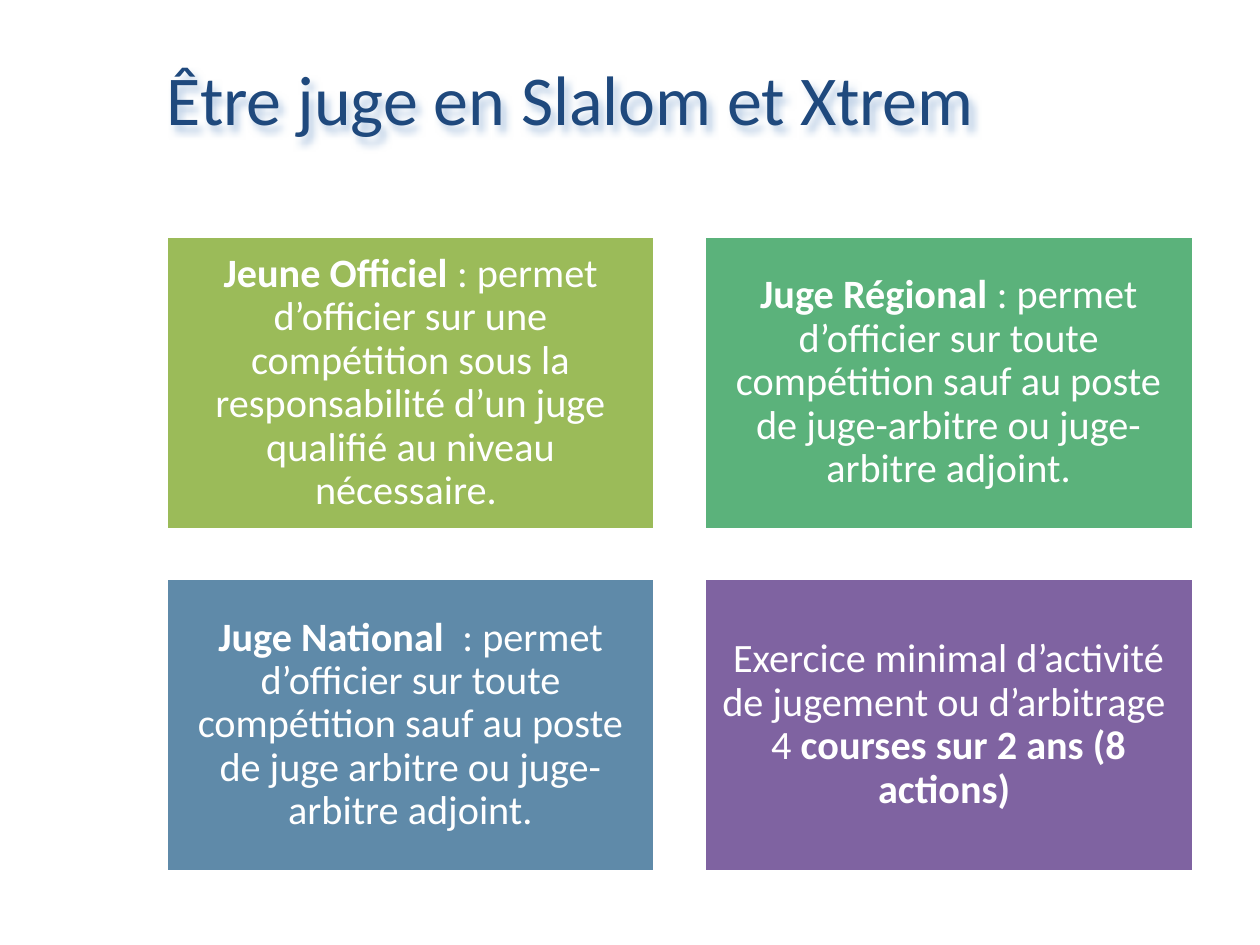
from lxml.etree import SubElement
from pptx import Presentation
from pptx.dml.color import RGBColor
from pptx.enum.shapes import MSO_SHAPE as Shape
from pptx.enum.text import MSO_ANCHOR as Anchor, PP_ALIGN as Align
from pptx.oxml.ns import qn
from pptx.util import Pt

TITLE = "Être juge en Slalom et Xtrem"
CARDS = [
    ("9BBB59", [
        ("Jeune Officiel ", True),
        (": permet d’officier sur une compétition sous la responsabilité "
         "d’un juge qualifié au niveau nécessaire. ", False),
    ]),
    ("5BB27B", [
        ("Juge Régional ", True),
        (": permet d’officier sur toute compétition sauf au poste de "
         "juge-arbitre ou juge-arbitre adjoint.", False),
    ]),
    ("5F8AA9", [
        ("Juge National  ", True),
        (": permet d’officier sur toute compétition sauf au poste de "
         "juge arbitre ou juge-arbitre adjoint.", False),
    ]),
    ("7F63A1", [
        ("Exercice minimal d’activité de jugement ou d’arbitrage  4", False),
        (" courses sur 2 ans (8 actions) ", True),
    ]),
]
COLUMNS = 2
LEFT, TOP = 95, 135
WIDTH, HEIGHT = 279.5, 167.5
GAP = 28


def color(value):
    return RGBColor.from_string(value)


def set_frame(shape, side, vertical):
    frame = shape.text_frame
    frame.word_wrap = True
    frame.vertical_anchor = Anchor.MIDDLE
    frame.margin_left = frame.margin_right = Pt(side)
    frame.margin_top = frame.margin_bottom = Pt(vertical)
    paragraph = frame.paragraphs[0]
    paragraph.alignment = Align.CENTER
    return paragraph


def add_run(paragraph, text, size, value, bold=False):
    run = paragraph.add_run()
    run.text = text
    run.font.name = "Calibri"
    run.font.size = Pt(size)
    run.font.bold = bold
    run.font.color.rgb = color(value)


def add_soft_shadow(shape, value):
    effects = SubElement(shape.element.spPr, qn("a:effectLst"))
    shadow = SubElement(effects, qn("a:outerShdw"), blurRad=str(Pt(4)),
                        dist=str(Pt(4)), dir="3600000", algn="tl", rotWithShape="0")
    SubElement(shadow, qn("a:srgbClr"), val=value)


def add_title(slide):
    box = slide.shapes.add_textbox(Pt(78), Pt(0), Pt(496), Pt(111))
    add_run(set_frame(box, 7.2, 3.6), TITLE, 40, "1F497D")
    add_soft_shadow(box, "B8CCE4")


def add_card(slide, index, fill, runs):
    row, column = divmod(index, COLUMNS)
    card = slide.shapes.add_shape(
        Shape.RECTANGLE, Pt(LEFT + column * (WIDTH + GAP)),
        Pt(TOP + row * (HEIGHT + GAP)), Pt(WIDTH), Pt(HEIGHT))
    card.shadow.inherit = False
    card.fill.solid()
    card.fill.fore_color.rgb = color(fill)
    card.line.color.rgb = color("FFFFFF")
    card.line.width = Pt(2)
    paragraph = set_frame(card, 7, 7)
    paragraph.line_spacing = 0.9
    for text, bold in runs:
        add_run(paragraph, text, 23, "FFFFFF", bold)


def main():
    presentation = Presentation()
    presentation.slide_width, presentation.slide_height = Pt(720), Pt(540)
    slide = presentation.slides.add_slide(presentation.slide_layouts[6])
    for index, (fill, runs) in enumerate(CARDS):
        add_card(slide, index, fill, runs)
    add_title(slide)
    presentation.save("out.pptx")


if __name__ == "__main__":
    main()
